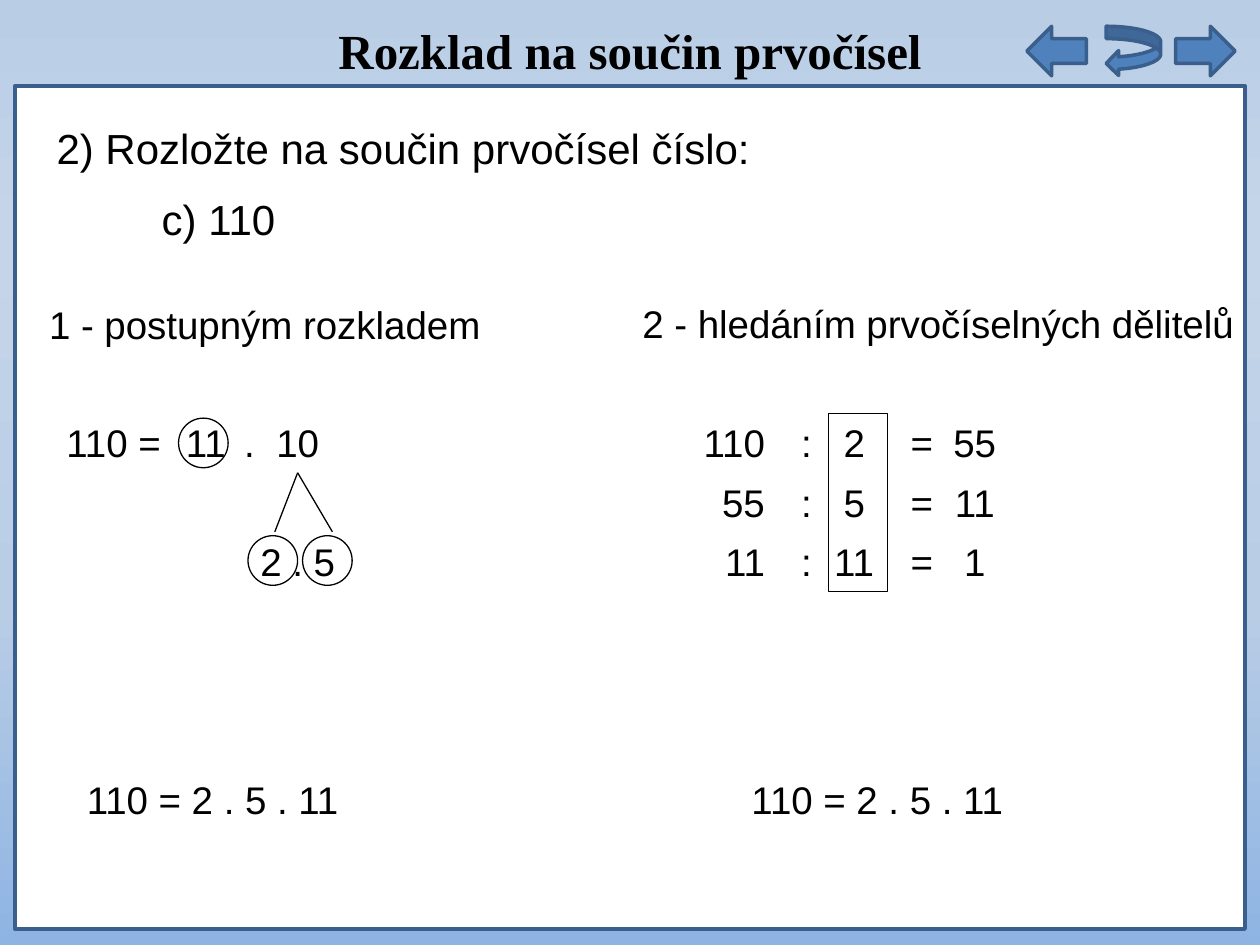
from lxml import etree
from pptx import Presentation
from pptx.dml.color import RGBColor
from pptx.enum.shapes import MSO_CONNECTOR, MSO_SHAPE
from pptx.enum.text import MSO_AUTO_SIZE, PP_ALIGN
from pptx.oxml.ns import qn
from pptx.util import Cm, Pt

LEFT, CENTER, RIGHT = PP_ALIGN.LEFT, PP_ALIGN.CENTER, PP_ALIGN.RIGHT
RECTANGLE, OVAL = MSO_SHAPE.RECTANGLE, MSO_SHAPE.OVAL
LEFT_ARROW, RIGHT_ARROW = MSO_SHAPE.LEFT_ARROW, MSO_SHAPE.RIGHT_ARROW
RETURN_ARROW = MSO_SHAPE.CURVED_LEFT_ARROW
STRAIGHT = MSO_CONNECTOR.STRAIGHT
FIT_TEXT = MSO_AUTO_SIZE.SHAPE_TO_FIT_TEXT
BLACK, BLUE, DARK_BLUE, WHITE = "000000", "4F81BD", "3A5F8C", "FFFFFF"

presentation = Presentation()
presentation.slide_width, presentation.slide_height = Cm(25.4), Cm(19.05)
slide = presentation.slides.add_slide(presentation.slide_layouts[6])


def add_text(text, left, top, width, size=22, align=LEFT, font="Arial",
             bold=False, tabs=(), wrap=True):
    """Add a text box, one paragraph per line; tabs holds (position in cm, kind)."""
    box = slide.shapes.add_textbox(Cm(left), Cm(top), Cm(width), Cm(1.2))
    frame = box.text_frame
    frame.word_wrap = wrap
    frame.auto_size = FIT_TEXT
    for index, line in enumerate(text.split("\n")):
        paragraph = frame.add_paragraph() if index else frame.paragraphs[0]
        paragraph.alignment = align
        run = paragraph.add_run()
        run.text = line
        run.font.name, run.font.size, run.font.bold = font, Pt(size), bold
        run.font.color.rgb = RGBColor.from_string(BLACK)
        if tabs:
            properties = paragraph._p.get_or_add_pPr()
            tab_list = etree.SubElement(properties, qn("a:tabLst"))
            for position, kind in tabs:
                etree.SubElement(tab_list, qn("a:tab"), pos=str(Cm(position)), algn=kind)
    return frame


def add_shape(kind, left, top, width, height, fill=None, line=BLACK, weight=0.75):
    shape = slide.shapes.add_shape(kind, Cm(left), Cm(top), Cm(width), Cm(height))
    shape.shadow.inherit = False
    if fill:
        shape.fill.solid()
        shape.fill.fore_color.rgb = RGBColor.from_string(fill)
    else:
        shape.fill.background()
    shape.line.color.rgb = RGBColor.from_string(line)
    shape.line.width = Pt(weight)


# Background gradient, top to bottom
background = slide.background.fill
background.gradient()
background.gradient_angle = 270
stop_list = next(slide.element.iter(qn("a:gsLst")))
for stop in list(stop_list):
    stop_list.remove(stop)
for percent, color in [(0, "B9CDE5"), (25, "C5D5E9"), (64, "B9CDE5"), (100, "8EB4E3")]:
    stop = etree.SubElement(stop_list, qn("a:gs"), pos=str(percent * 1000))
    etree.SubElement(stop, qn("a:srgbClr"), val=color)

# White panel, title and navigation arrows
add_shape(RECTANGLE, 0.3, 1.73, 24.8, 17, WHITE, DARK_BLUE, 2)
add_text("Rozklad na součin prvočísel", 0.3, 0.28, 24.8, 28, CENTER,
         "Times New Roman", bold=True)
for kind, left, width in [(LEFT_ARROW, 20.7, 1.2), (RETURN_ARROW, 22.3, 1.1),
                          (RIGHT_ARROW, 23.7, 1.2)]:
    add_shape(kind, left, 0.53, width, 1, BLUE, DARK_BLUE, 2)

# Task
task = add_text("2) Rozložte na součin prvočísel číslo:\nc) 110", 0.89, 2.34, 22.45, 24)
task.paragraphs[0].space_after = Pt(12)
task.paragraphs[1]._p.get_or_add_pPr().set("marL", str(Cm(2.12)))

# Headings and results of the two methods
add_text("1 - postupným rozkladem", 0.74, 5.95, 13)
add_text("2 - hledáním prvočíselných dělitelů", 12.7, 5.92, 12.6, wrap=False)
for left in (1.5, 14.9):
    add_text("110 = 2 . 5 . 11", left, 15.52, 7.6)

# Method 1: factor tree with circled primes
row_top, row_step = 8.33, 1.2
add_text("110 =", 1.09, row_top, 2.8)
add_text("11\t.\t10", 3.5, row_top, 4, tabs=[(1.17, "l"), (1.82, "l")])
add_text("2 . 5", 5, row_top + 2 * row_step, 2.95)
for left, top in [(3.6, 8.43), (5, 10.8), (6.1, 10.8)]:
    add_shape(OVAL, left, top, 1, 1)
for end in (5.54, 6.7):
    branch = slide.shapes.add_connector(STRAIGHT, Cm(6), Cm(9.53), Cm(end), Cm(10.72))
    branch.line.color.rgb = RGBColor.from_string(BLACK)
    branch.line.width = Pt(0.75)
    etree.SubElement(branch._element.spPr, qn("a:effectLst"))

# Method 2: repeated division with framed divisors
divisions = [("110", "2", "55"), ("55", "5", "11"), ("11", "11", "1")]
for row, (dividend, divisor, quotient) in enumerate(divisions):
    top = row_top + row * row_step
    add_text(dividend, 13.67, top, 2, align=RIGHT)
    add_text(":", 15.9, top, 1)
    add_text(divisor, 16.42, top, 1.6, align=CENTER)
    add_text("=\t" + quotient, 18.11, top, 3, tabs=[(1.29, "ctr")])
add_shape(RECTANGLE, 16.7, row_top, 1.2, 3 * row_step)

presentation.save("out.pptx")
